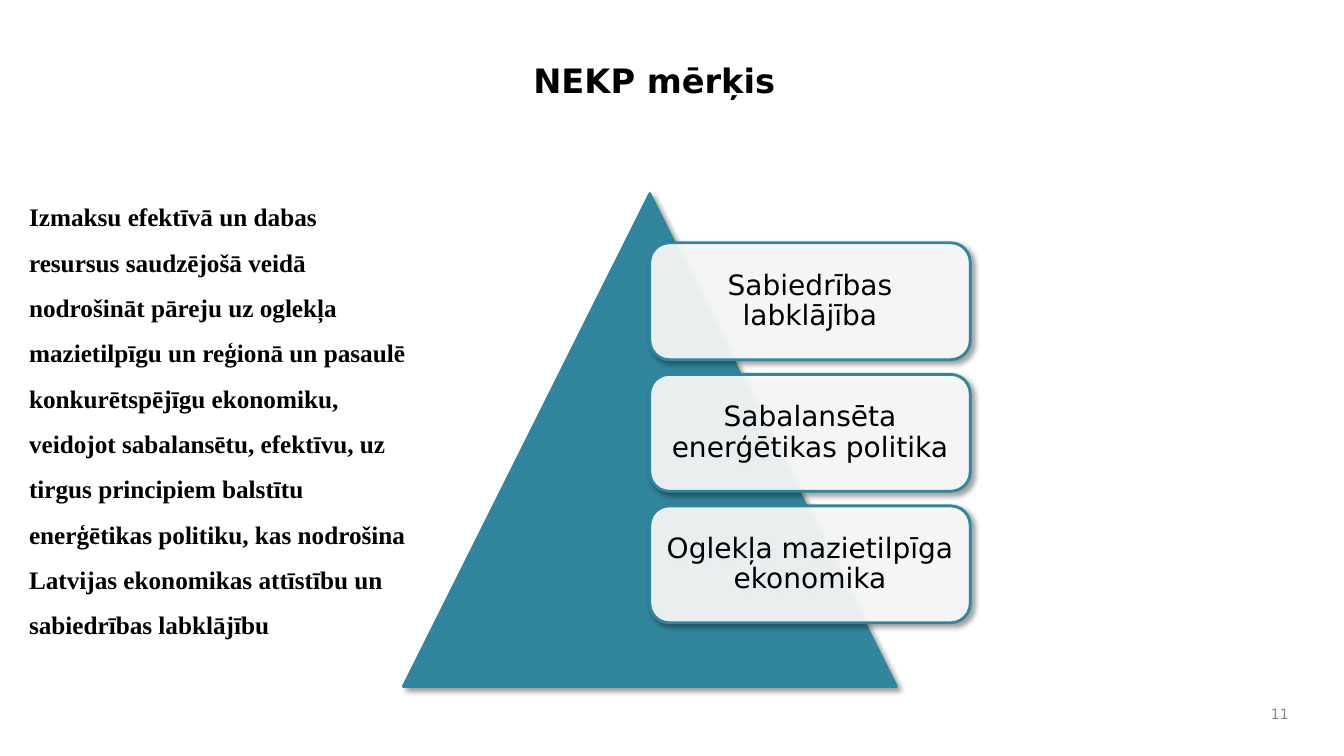
from dataclasses import dataclass

from lxml import etree
from pptx import Presentation
from pptx.dml.color import RGBColor
from pptx.enum.shapes import MSO_SHAPE as Shape
from pptx.enum.text import MSO_ANCHOR as Anchor, MSO_AUTO_SIZE as AutoSize, PP_ALIGN as Align
from pptx.oxml import parse_xml
from pptx.oxml.ns import nsdecls, qn
from pptx.util import Inches, Pt

# Content
TITLE = "NEKP mērķis"
GOAL = (
    "Izmaksu efektīvā un dabas resursus saudzējošā veidā nodrošināt pāreju uz oglekļa "
    "mazietilpīgu un reģionā un pasaulē konkurētspējīgu ekonomiku, veidojot sabalansētu, "
    "efektīvu, uz tirgus principiem balstītu enerģētikas politiku, kas nodrošina Latvijas "
    "ekonomikas attīstību un sabiedrības labklājību"
)
PILLARS = [
    "Sabiedrības labklājība",
    "Sabalansēta enerģētikas politika",
    "Oglekļa mazietilpīga ekonomika",
]
PAGE_NUMBER = "11"


@dataclass(frozen=True)
class Theme:
    teal: str = "31859C"
    white: str = "FFFFFF"
    black: str = "000000"
    gray: str = "898989"
    sans: str = "DejaVu Sans"
    serif: str = "Times New Roman"
    title_size: int = 24
    pillar_size: int = 20
    goal_size: int = 18
    number_size: int = 10
    line_width: int = 2


THEME = Theme()

# Layout in inches: left, top, width, height
SLIDE_SIZE = (13.33, 7.5)
TITLE_BOX = (5.19, 0.54, 8.89, 1.13)
GOAL_BOX = (0.19, 1.8, 3.94, 4.64)
NUMBER_BOX = (12.44, 6.92, 0.44, 0.33)
PYRAMID_LEFT, PYRAMID_TOP, PYRAMID_SIDE = 4, 1.92, 4.89
CARD_WIDTH = PYRAMID_SIDE * 0.65
CARD_HEIGHT = 1.16
CARD_PITCH = CARD_HEIGHT * 9 / 8
CARD_LEFT = PYRAMID_LEFT + PYRAMID_SIDE / 2
CARD_TOP = PYRAMID_TOP + PYRAMID_SIDE / 10


def inches(box):
    return [Inches(length) for length in box]


def write(shape, text, *, size, font=THEME.sans, color=THEME.black, bold=False,
          align=Align.LEFT, anchor=Anchor.TOP, spacing=1.0, inset=(0.1, 0.05)):
    frame = shape.text_frame
    frame.word_wrap = True
    frame.auto_size = AutoSize.NONE
    frame.vertical_anchor = anchor
    frame.margin_left = frame.margin_right = Inches(inset[0])
    frame.margin_top = frame.margin_bottom = Inches(inset[1])
    frame.text = text
    paragraph = frame.paragraphs[0]
    paragraph.alignment = align
    paragraph.line_spacing = spacing
    paragraph.space_before = Pt(0)
    style = paragraph.runs[0].font
    style.name, style.size, style.bold = font, Pt(size), bold
    style.color.rgb = RGBColor.from_string(color)


def add_panel(slide, kind, box, fill, opacity=100):
    shape = slide.shapes.add_shape(kind, *inches(box))
    shape.fill.solid()
    shape.fill.fore_color.rgb = RGBColor.from_string(fill)
    shape.line.color.rgb = RGBColor.from_string(THEME.teal)
    shape.line.width = Pt(THEME.line_width)
    # Fill transparency
    if opacity < 100:
        color = shape.fill._xPr.find(qn("a:solidFill"))[0]
        etree.SubElement(color, qn("a:alpha")).set("val", str(opacity * 1000))
    # Soft shadow towards the lower right
    shape.shadow.inherit = False
    effects = shape._element.spPr.find(qn("a:effectLst"))
    effects.append(parse_xml(
        f'<a:outerShdw {nsdecls("a")} blurRad="{Pt(4)}" dist="{Pt(3)}" dir="{45 * 60000}" '
        f'rotWithShape="0"><a:srgbClr val="{THEME.black}"><a:alpha val="40000"/>'
        '</a:srgbClr></a:outerShdw>'))
    return shape


def main():
    presentation = Presentation()
    presentation.slide_width, presentation.slide_height = inches(SLIDE_SIZE)
    slide = presentation.slides.add_slide(presentation.slide_layouts[5])

    # Title
    title = slide.shapes.title
    title.left, title.top, title.width, title.height = inches(TITLE_BOX)
    write(title, TITLE, size=THEME.title_size, bold=True)

    # Pyramid with one card per pillar
    add_panel(slide, Shape.ISOSCELES_TRIANGLE,
              (PYRAMID_LEFT, PYRAMID_TOP, PYRAMID_SIDE, PYRAMID_SIDE), THEME.teal)
    for row, pillar in enumerate(PILLARS):
        box = (CARD_LEFT, CARD_TOP + row * CARD_PITCH, CARD_WIDTH, CARD_HEIGHT)
        card = add_panel(slide, Shape.ROUNDED_RECTANGLE, box, THEME.white, opacity=90)
        write(card, pillar, size=THEME.pillar_size, align=Align.CENTER,
              anchor=Anchor.MIDDLE, spacing=0.9, inset=(0.08, 0.08))

    # Page number and goal statement
    number = slide.shapes.add_textbox(*inches(NUMBER_BOX))
    write(number, PAGE_NUMBER, size=THEME.number_size, color=THEME.gray,
          align=Align.RIGHT, anchor=Anchor.MIDDLE)
    goal = slide.shapes.add_textbox(*inches(GOAL_BOX))
    write(goal, GOAL, size=THEME.goal_size, font=THEME.serif, bold=True, spacing=1.5)

    presentation.save("out.pptx")


if __name__ == "__main__":
    main()
